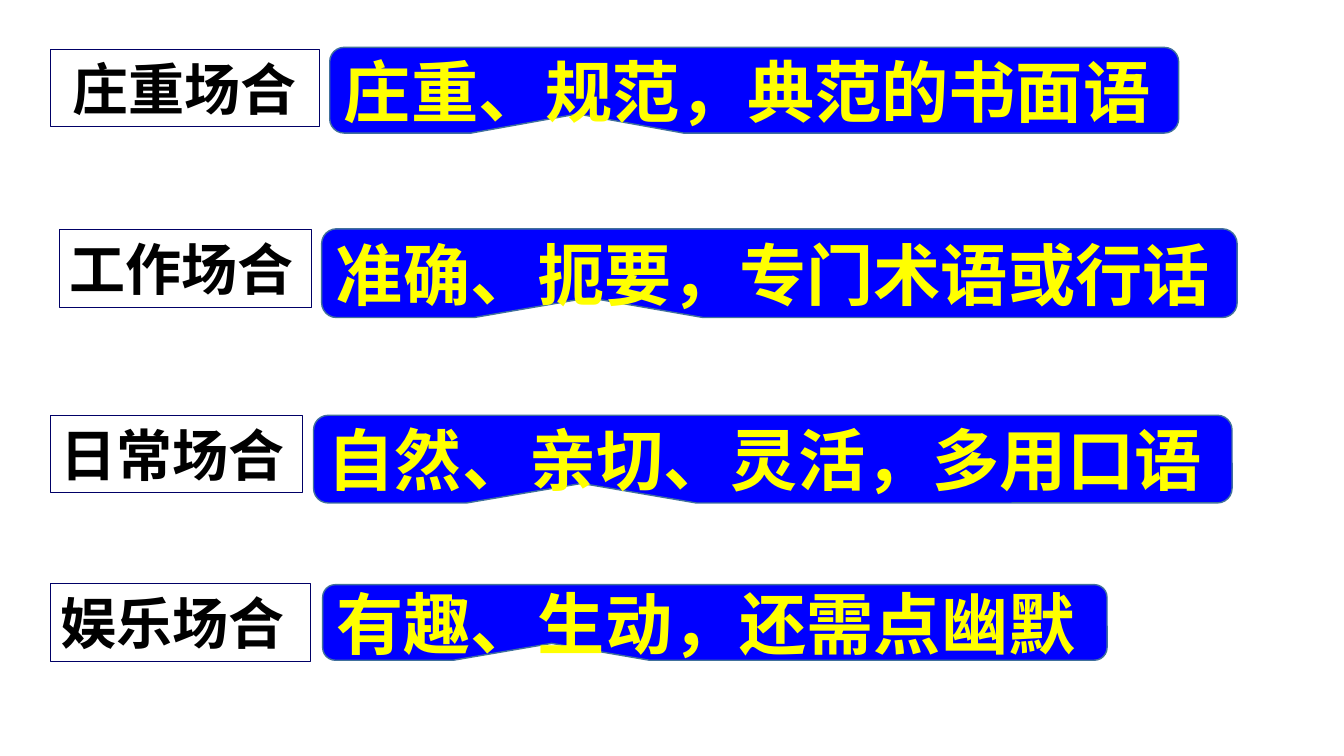
from dataclasses import dataclass

from pptx import Presentation
from pptx.dml.color import RGBColor
from pptx.enum.shapes import MSO_SHAPE
from pptx.enum.text import MSO_ANCHOR, PP_ALIGN
from pptx.util import Emu, Pt

RECTANGLE = MSO_SHAPE.RECTANGLE
CALLOUT = MSO_SHAPE.ROUNDED_RECTANGULAR_CALLOUT
TOP, MIDDLE = MSO_ANCHOR.TOP, MSO_ANCHOR.MIDDLE
LEFT = PP_ALIGN.LEFT
EMU_PER_PX = 9144
BLANK_LAYOUT = 6
CALLOUT_ADJUSTMENTS = (-0.208, 0.277, 0.167)
TEXT_INSET = 10
LATIN, BODY = "Times New Roman", "Calibri"


@dataclass(frozen=True)
class BoxStyle:
    shape: int
    fill: str
    line: str
    line_width: float
    color: str
    size: int
    anchor: int


@dataclass(frozen=True)
class Theme:
    label: BoxStyle = BoxStyle(RECTANGLE, "FFFFFF", "000066", 0.75, "000000", 40, TOP)
    callout: BoxStyle = BoxStyle(CALLOUT, "0000FF", "41719C", 1, "FFFF00", 48, MIDDLE)


THEME = Theme()

# Each row: label box, label inset, label text, callout box, callout runs
ROWS = [
    ((50, 49, 267, 77), 22, "庄重场合",
     (327, 47, 842, 85), [("庄重、规范，典范的书面语", LATIN)]),
    ((59, 228, 250, 77), TEXT_INSET, "工作场合",
     (319, 227, 908, 88), [("准确、扼要", BODY), ("，", LATIN), ("专门术语或行话", BODY)]),
    ((50, 412, 250, 77), TEXT_INSET, "日常场合",
     (311, 412, 911, 87), [("自然、亲切、灵活，多用口语", LATIN)]),
    ((50, 579, 258, 77), TEXT_INSET, "娱乐场合",
     (320, 580, 778, 75), [("有趣、生动，还需点幽默", LATIN)]),
]


def px(length):
    return Emu(length * EMU_PER_PX)


def set_values(target, values):
    for name, value in values.items():
        setattr(target, name, value)


def add_box(slide, box, style, runs, inset=TEXT_INSET):
    shape = slide.shapes.add_shape(style.shape, *map(px, box))
    shape.shadow.inherit = False
    shape.fill.solid()
    shape.fill.fore_color.rgb = RGBColor.from_string(style.fill)
    shape.line.color.rgb = RGBColor.from_string(style.line)
    shape.line.width = Pt(style.line_width)
    frame = shape.text_frame
    set_values(frame, {"word_wrap": True, "vertical_anchor": style.anchor,
                       "margin_left": px(inset)})
    para = frame.paragraphs[0]
    para.alignment = LEFT
    for text, font in runs:
        span = para.add_run()
        span.text = text
        set_values(span.font, {"name": font, "size": Pt(style.size), "bold": True})
        span.font.color.rgb = RGBColor.from_string(style.color)
    return shape


def add_occasion_row(slide, label_box, inset, label, callout_box, runs):
    add_box(slide, label_box, THEME.label, [(label, LATIN)], inset)
    callout = add_box(slide, callout_box, THEME.callout, runs)
    for index, value in enumerate(CALLOUT_ADJUSTMENTS):
        callout.adjustments[index] = value


def main():
    deck = Presentation()
    set_values(deck, {"slide_width": px(1333), "slide_height": px(750)})
    slide = deck.slides.add_slide(deck.slide_layouts[BLANK_LAYOUT])
    for row in ROWS:
        add_occasion_row(slide, *row)
    deck.save("out.pptx")


if __name__ == "__main__":
    main()
